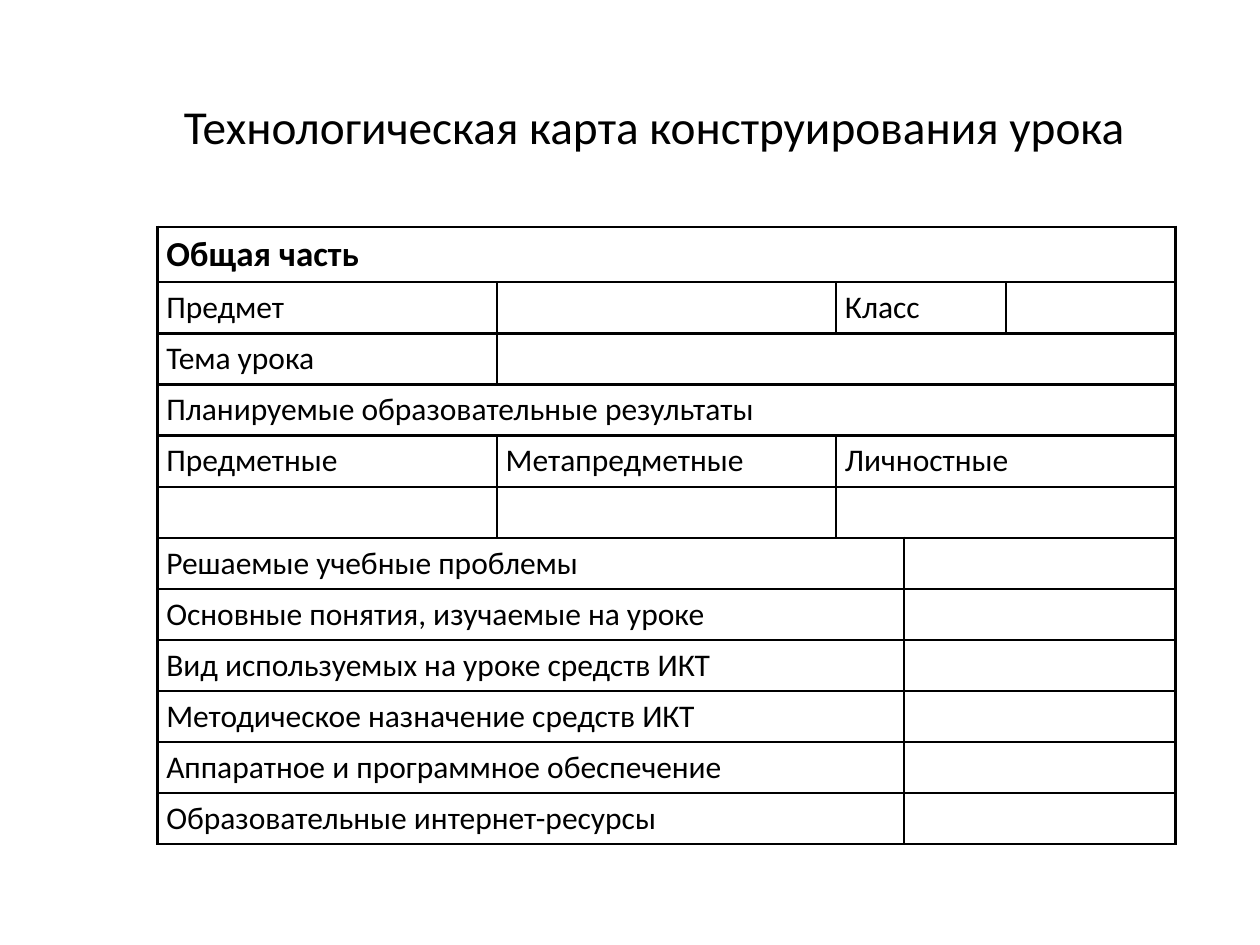
from dataclasses import dataclass

from lxml.etree import SubElement
from pptx import Presentation
from pptx.dml.color import RGBColor
from pptx.enum.text import MSO_ANCHOR, PP_ALIGN
from pptx.oxml.ns import qn
from pptx.util import Inches, Pt


@dataclass(frozen=True)
class Theme:
    """Colours, font and sizes of the slide."""
    font: str = "Calibri"
    ink: str = "000000"
    paper: str = "FFFFFF"
    title: int = 27
    heading: int = 20
    body: int = 18
    border: float = 1.5


THEME = Theme()
TITLE = "Технологическая карта конструирования урока"
TABLE_LEFT, TABLE_TOP, TABLE_WIDTH, TABLE_HEIGHT = 1.25, 1.8, 8.08, 4.87
COLUMN_SHARES = [1 / 3, 1 / 3, 1 / 15, 1 / 10, 1 / 6]
WIDE_LABELS = [
    "Решаемые учебные проблемы",
    "Основные понятия, изучаемые на уроке",
    "Вид используемых на уроке средств ИКТ",
    "Методическое назначение средств ИКТ",
    "Аппаратное и программное обеспечение",
    "Образовательные интернет-ресурсы",
]
ROWS = [
    [("Общая часть", 5)],
    [("Предмет", 1), ("", 1), ("Класс", 2), ("", 1)],
    [("Тема урока", 1), ("", 4)],
    [("Планируемые образовательные результаты", 5)],
    [("Предметные", 1), ("Метапредметные", 1), ("Личностные", 3)],
    [("", 1), ("", 1), ("", 3)],
] + [[(label, 3), ("", 2)] for label in WIDE_LABELS]


def add_span(para, text, size, bold=False):
    """Add one formatted run to a paragraph."""
    span = para.add_run()
    span.text = text
    span.font.name = THEME.font
    span.font.size = Pt(size)
    span.font.bold = bold
    span.font.color.rgb = RGBColor.from_string(THEME.ink)


def fill_title(page):
    """Place and write the title placeholder."""
    box = page.shapes.title
    box.left, box.top = Inches(1.36), Inches(0.68)
    box.width, box.height = Inches(8.08), Inches(0.69)
    box.text_frame.vertical_anchor = MSO_ANCHOR.MIDDLE
    para = box.text_frame.paragraphs[0]
    para.alignment = PP_ALIGN.LEFT
    para.line_spacing = 0.9
    add_span(para, TITLE, THEME.title)


def style_cell(cell):
    """Give a cell its borders, fill and margins."""
    properties = cell._tc.get_or_add_tcPr()
    for side in ("a:lnL", "a:lnR", "a:lnT", "a:lnB"):
        line = SubElement(properties, qn(side), w=str(Pt(THEME.border)))
        paint = SubElement(line, qn("a:solidFill"))
        SubElement(paint, qn("a:srgbClr"), val=THEME.ink)
    cell.fill.solid()
    cell.fill.fore_color.rgb = RGBColor.from_string(THEME.paper)
    cell.margin_left = cell.margin_right = Inches(0.07)
    cell.margin_top = cell.margin_bottom = Inches(0.05)


def fill_row(table, index, entries):
    """Merge and write the cells of one row."""
    column = 0
    heading = index == 0
    for text, width in entries:
        cell = table.cell(index, column)
        if width > 1:
            cell.merge(table.cell(index, column + width - 1))
        if text:
            size = THEME.heading if heading else THEME.body
            add_span(cell.text_frame.paragraphs[0], text, size, heading)
        column += width


def add_lesson_table(page):
    """Add the lesson plan table."""
    table = page.shapes.add_table(
        len(ROWS), len(COLUMN_SHARES), Inches(TABLE_LEFT), Inches(TABLE_TOP),
        Inches(TABLE_WIDTH), Inches(TABLE_HEIGHT)).table
    table.first_row = table.horz_banding = False
    for column, share in zip(table.columns, COLUMN_SHARES):
        column.width = Inches(TABLE_WIDTH * share)
    for cell in table.iter_cells():
        style_cell(cell)
    for index, entries in enumerate(ROWS):
        fill_row(table, index, entries)


def main():
    """Build and save the deck."""
    deck = Presentation()
    deck.slide_width, deck.slide_height = Inches(10), Inches(7.5)
    page = deck.slides.add_slide(deck.slide_layouts[5])
    fill_title(page)
    add_lesson_table(page)
    deck.save("out.pptx")


if __name__ == "__main__":
    main()
